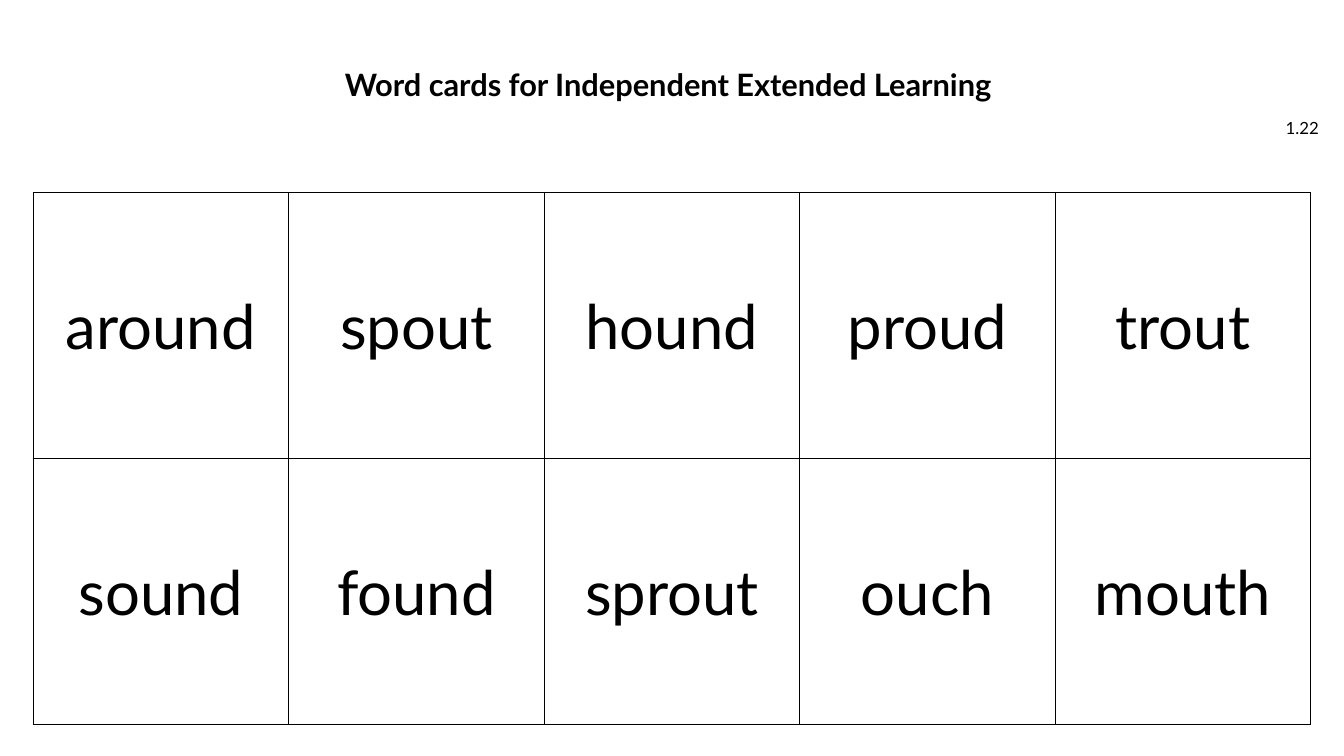
from pptx import Presentation
from pptx.dml.color import RGBColor as Rgb
from pptx.enum.text import MSO_ANCHOR as Anchor, MSO_AUTO_SIZE as Fit, PP_ALIGN as Align
from pptx.oxml import parse_xml
from pptx.oxml.ns import nsdecls
from pptx.util import Inches, Pt

THEME = {
    "ink": "000000",
    "paper": "FFFFFF",
    "face": "Lato",
    "title": Pt(22),
    "label": Pt(12),
    "word": Pt(44),
    "rule": Pt(1),
}
WORDS = [
    ["around", "spout", "hound", "proud", "trout"],
    ["sound", "found", "sprout", "ouch", "mouth"],
]


def write(frame, text, align, **form):
    """Put one styled paragraph into a text frame."""
    para = frame.paragraphs[0]
    para.alignment = align
    run = para.add_run()
    run.text = text
    for key, value in {"name": THEME["face"], "bold": False, **form}.items():
        setattr(run.font, key, value)
    run.font.color.rgb = Rgb.from_string(THEME["ink"])
    return para


def border(cell):
    """Draw a line on all four sides of a cell."""
    props = cell._tc.get_or_add_tcPr()
    for spot, side in enumerate("LRTB"):
        props.insert(spot, parse_xml(
            f'<a:ln{side} {nsdecls("a")} w="{THEME["rule"]}"><a:solidFill>'
            f'<a:srgbClr val="{THEME["ink"]}"/></a:solidFill></a:ln{side}>'))


# Slide
deck = Presentation()
deck.slide_width, deck.slide_height = Inches(13.33), Inches(7.5)
slide = deck.slides.add_slide(deck.slide_layouts[5])

# Title
title = slide.shapes.title
place = {"left": 2.31, "top": 0.64, "width": 8.71, "height": 0.35}
for key, value in place.items():
    setattr(title, key, Inches(value))
frame = title.text_frame
for key, value in {"auto_size": Fit.NONE, "vertical_anchor": Anchor.TOP,
                   "word_wrap": True}.items():
    setattr(frame, key, value)
para = write(frame, "Word cards for Independent Extended Learning ",
             Align.CENTER, size=THEME["title"], bold=True)
para.line_spacing = 0.9

# Unit number
label = slide.shapes.add_textbox(Inches(12.55), Inches(1.07), Inches(0.63), Inches(0.4))
frame = label.text_frame
for key, value in {"word_wrap": True, "vertical_anchor": Anchor.MIDDLE}.items():
    setattr(frame, key, value)
write(frame, "1.22", Align.RIGHT, size=THEME["label"])

# Word cards
table = slide.shapes.add_table(
    len(WORDS), len(WORDS[0]),
    Inches(0.33), Inches(1.91), Inches(12.67), Inches(5.28)).table
table.first_row = table.horz_banding = False
for row, words in enumerate(WORDS):
    for col, word in enumerate(words):
        cell = table.cell(row, col)
        cell.fill.solid()
        cell.fill.fore_color.rgb = Rgb.from_string(THEME["paper"])
        cell.vertical_anchor = Anchor.MIDDLE
        border(cell)
        write(cell.text_frame, word, Align.CENTER, size=THEME["word"])

deck.save("out.pptx")
